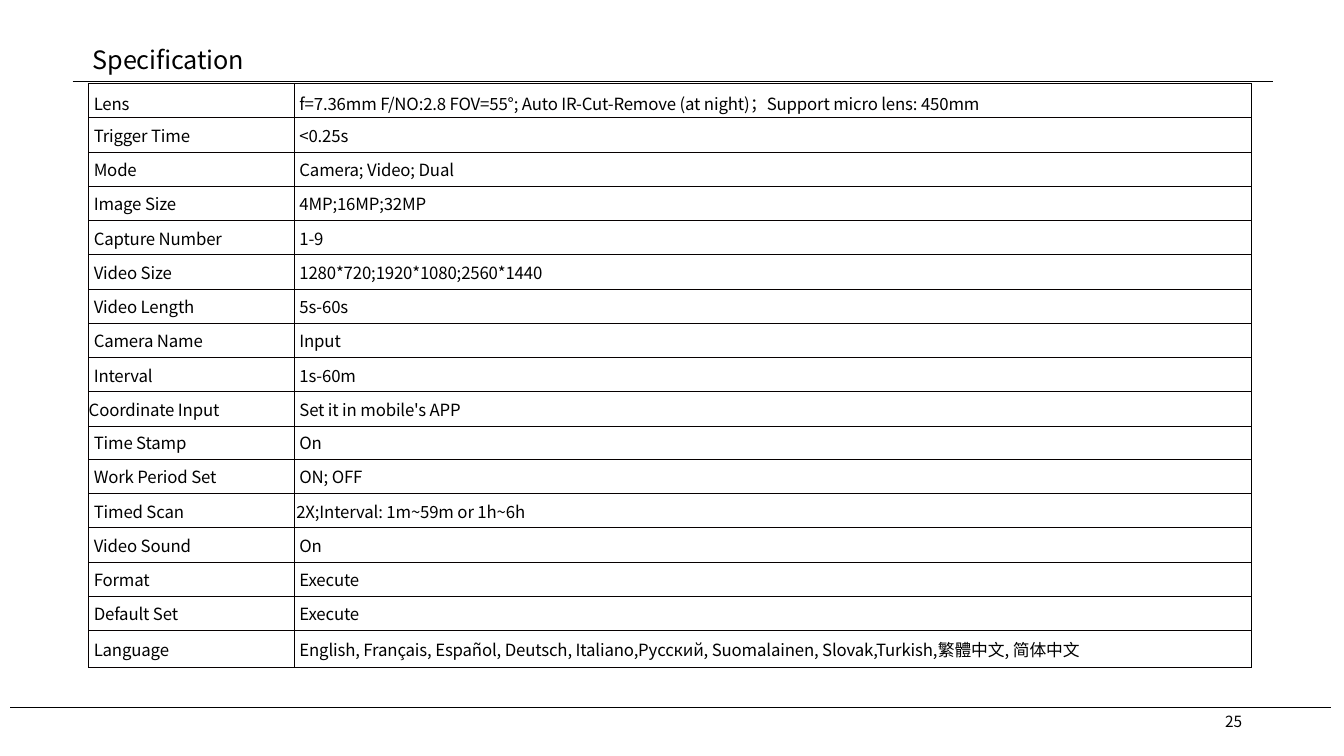
from dataclasses import dataclass

from lxml.etree import SubElement
from pptx import Presentation
from pptx.dml.color import RGBColor
from pptx.enum.shapes import MSO_CONNECTOR as Connector
from pptx.enum.text import MSO_ANCHOR as Anchor, PP_ALIGN as Align
from pptx.oxml.ns import qn
from pptx.util import Inches, Pt


@dataclass(frozen=True)
class Theme:
    font: str = "Noto Sans CJK SC"
    ink: str = "000000"
    grid: str = "060000"
    title: float = 18
    body: float = 12
    page: float = 11
    rule: float = 0.6
    grid_line: float = 1
    edge_line: float = 0.75
    tracking: float = -0.1


THEME = Theme()
SPECS = [
    ("Lens", "f=7.36mm F/NO:2.8 FOV=55°; Auto IR-Cut-Remove (at night)；Support micro lens: 450mm"),
    ("Trigger Time", "<0.25s"),
    ("Mode", "Camera; Video; Dual"),
    ("Image Size", "4MP;16MP;32MP"),
    ("Capture Number", "1-9"),
    ("Video Size", "1280*720;1920*1080;2560*1440"),
    ("Video Length", "5s-60s"),
    ("Camera Name", "Input"),
    ("Interval", "1s-60m"),
    ("Coordinate Input", "Set it in mobile's APP"),
    ("Time Stamp", "On"),
    ("Work Period Set", "ON; OFF"),
    ("Timed Scan", "2X;Interval: 1m~59m or 1h~6h"),
    ("Video Sound", "On"),
    ("Format", "Execute"),
    ("Default Set", "Execute"),
    ("Language", "English, Français, Español, Deutsch, Italiano,Pусский, "
                 "Suomalainen, Slovak,Turkish,繁體中文, 简体中文"),
]
COLUMN_WIDTHS = (2.04, 9.49)
# Exceptions to the usual row height, top inset and indent
ROW_HEIGHTS = {"Time Stamp": 0.33, "Language": 0.37}
TOP_INSETS = {"Lens": 0.07, "Time Stamp": 0.04, "Language": 0.06}
INDENTS = {("Coordinate Input", 0): 0, ("Timed Scan", 1): 0.02}


def write(frame, text, size, tracking=THEME.tracking):
    frame.text = text
    paragraph = frame.paragraphs[0]
    paragraph.alignment = Align.LEFT
    font = paragraph.font
    font.name, font.size = THEME.font, Pt(size)
    font.color.rgb = RGBColor.from_string(THEME.ink)
    # East Asian face and letter spacing
    properties = paragraph._p.pPr.find(qn("a:defRPr"))
    properties.set("spc", str(round(tracking * 100)))
    SubElement(properties, qn("a:ea")).set("typeface", THEME.font)


def set_insets(frame, left, top):
    frame.margin_left, frame.margin_top = Inches(left), Inches(top)
    frame.margin_right = frame.margin_bottom = 0


def add_title(slide, text):
    title = slide.shapes.title
    title.left, title.top = Inches(0.91), Inches(0.43)
    title.width, title.height = Inches(1.56), Inches(0.33)
    frame = title.text_frame
    write(frame, text, THEME.title)
    set_insets(frame, 0.01, 0.01)
    frame.vertical_anchor = Anchor.TOP
    frame.word_wrap = False


def add_rule(slide, left, right, y):
    rule = slide.shapes.add_connector(
        Connector.STRAIGHT, Inches(left), Inches(y), Inches(right), Inches(y))
    rule.line.width = Pt(THEME.rule)
    rule.line.color.rgb = RGBColor.from_string(THEME.ink)
    SubElement(rule._element.spPr, qn("a:effectLst"))


def add_border(cell, side, width, color):
    line = SubElement(cell._tc.get_or_add_tcPr(), qn(f"a:ln{side}"))
    line.set("w", str(Pt(width)))
    fill = SubElement(line, qn("a:solidFill"))
    SubElement(fill, qn("a:srgbClr")).set("val", color)


def format_cell(cell, name, column, text):
    write(cell.text_frame, text, THEME.body)
    set_insets(cell, INDENTS.get((name, column), 0.05), TOP_INSETS.get(name, 0.05))
    cell.vertical_anchor = Anchor.TOP
    for side in "LRTB":
        if side == "R" and column == 1:
            add_border(cell, side, THEME.edge_line, THEME.ink)
        else:
            add_border(cell, side, THEME.grid_line, THEME.grid)
    cell.fill.background()


def add_specs(slide):
    heights = [ROW_HEIGHTS.get(name, 0.34) for name, _ in SPECS]
    specs = slide.shapes.add_table(
        len(SPECS), len(COLUMN_WIDTHS), Inches(0.88), Inches(0.83),
        Inches(sum(COLUMN_WIDTHS)), Inches(sum(heights))).table
    specs.first_row = specs.horz_banding = False
    for column, width in zip(specs.columns, COLUMN_WIDTHS):
        column.width = Inches(width)
    for row, height, entry in zip(specs.rows, heights, SPECS):
        row.height = Inches(height)
        for column, text in enumerate(entry):
            format_cell(row.cells[column], entry[0], column, text)


def add_page_number(slide, number):
    page = slide.shapes.add_textbox(
        Inches(12.12), Inches(7.02), Inches(0.25), Inches(0.22))
    write(page.text_frame, number, THEME.page, tracking=0)
    set_insets(page.text_frame, 0.03, 0.04)
    page.text_frame.word_wrap = False


def main():
    deck = Presentation()
    deck.slide_width, deck.slide_height = Inches(13.33), Inches(7.5)
    slide = deck.slides.add_slide(deck.slide_layouts[5])

    # Heading
    add_rule(slide, 0.72, 12.63, 0.81)
    add_title(slide, "Specification")

    # Specification table
    add_specs(slide)

    # Footer
    add_rule(slide, 0.1, 13.2, 7.02)
    add_page_number(slide, "25")

    deck.save("out.pptx")


if __name__ == "__main__":
    main()
